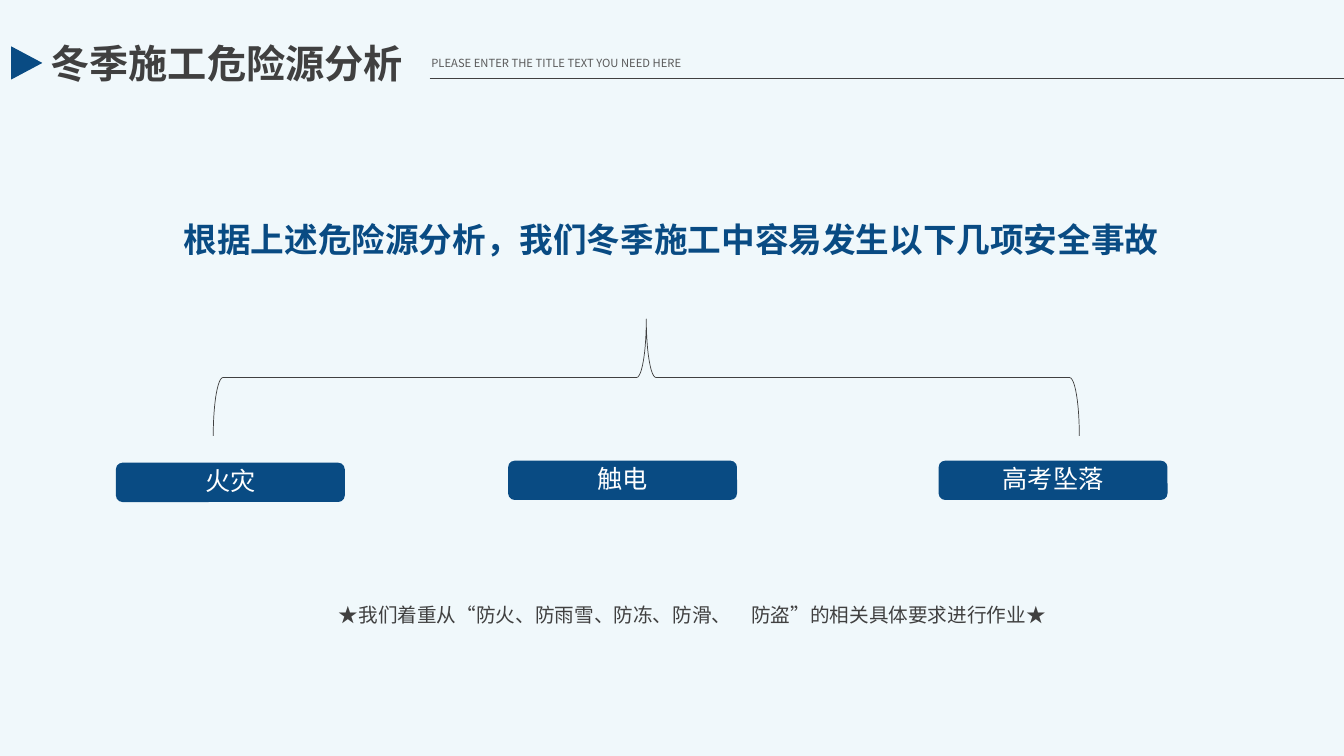
from typing import NamedTuple

from lxml.etree import SubElement
from pptx import Presentation
from pptx.dml.color import RGBColor
from pptx.enum.shapes import MSO_CONNECTOR, MSO_SHAPE as Shape
from pptx.enum.text import MSO_ANCHOR, MSO_AUTO_SIZE, PP_ALIGN as Align
from pptx.oxml.ns import qn
from pptx.util import Inches, Pt

FONT = "Noto Sans CJK SC"
BACKGROUND = RGBColor(0xF0, 0xF8, 0xFB)
NAVY = RGBColor(0x09, 0x4B, 0x83)
DARK = RGBColor(0x40, 0x40, 0x40)
GRAY = RGBColor(0x59, 0x59, 0x59)
WHITE = RGBColor(0xFF, 0xFF, 0xFF)


class Box(NamedTuple):
    left: float
    top: float
    width: float
    height: float

    def lengths(self) -> list:
        return [Inches(v) for v in self]


class Style(NamedTuple):
    size: int
    color: RGBColor
    bold: bool = False
    align: Align = Align.LEFT


class Accident(NamedTuple):
    name: str
    left: float
    top: float


ACCIDENTS = [
    Accident("火灾", 1.15, 4.59),
    Accident("触电", 5.04, 4.57),
    Accident("高考坠落", 9.31, 4.57),
]


def write(shape, text: str, style: Style, inset: float = 0.1) -> None:
    tf = shape.text_frame
    tf.word_wrap = True
    tf.auto_size = MSO_AUTO_SIZE.NONE
    tf.vertical_anchor = MSO_ANCHOR.MIDDLE
    tf.margin_left = tf.margin_right = Inches(inset)
    tf.margin_top = tf.margin_bottom = 0
    p = tf.paragraphs[0]
    p.text = text
    p.alignment = style.align
    p.font.name = FONT
    p.font.size = Pt(style.size)
    p.font.bold = style.bold
    p.font.color.rgb = style.color
    # East Asian typeface
    SubElement(p.font._element, qn("a:ea")).set("typeface", FONT)


def add_text(s, box: Box, text: str, style: Style) -> None:
    write(s.shapes.add_textbox(*box.lengths()), text, style)


def add_solid(s, kind: Shape, box: Box):
    sp = s.shapes.add_shape(kind, *box.lengths())
    sp.shadow.inherit = False
    sp.fill.solid()
    sp.fill.fore_color.rgb = NAVY
    sp.line.fill.background()
    return sp


def add_header(s) -> None:
    title = s.shapes.title
    title.left, title.top, title.width, title.height = Box(0.5, 0.39, 4.89, 0.47).lengths()
    write(title, "冬季施工危险源分析", Style(28, DARK, bold=True), inset=0)
    add_text(s, Box(4.18, 0.51, 3.62, 0.24),
             "PLEASE ENTER THE TITLE TEXT YOU NEED HERE", Style(8, GRAY))
    add_solid(s, Shape.ISOSCELES_TRIANGLE, Box(0.1, 0.47, 0.33, 0.31)).rotation = 90
    rule = s.shapes.add_connector(MSO_CONNECTOR.STRAIGHT, Inches(4.26), Inches(0.78),
                                  Inches(13.33), Inches(0.78))
    rule.line.color.rgb = DARK
    rule.line.width = Pt(1)
    SubElement(rule._element.spPr, qn("a:effectLst"))


def add_brace(s) -> None:
    brace = s.shapes.add_shape(Shape.RIGHT_BRACE, *Box(5.83, -0.55, 1.16, 8.59).lengths())
    brace.rotation = 270
    brace.shadow.inherit = False
    brace.fill.background()
    brace.line.color.rgb = DARK
    brace.line.width = Pt(0.5)


def add_accident(s, accident: Accident) -> None:
    sp = add_solid(s, Shape.ROUNDED_RECTANGLE, Box(accident.left, accident.top, 2.27, 0.39))
    write(sp, accident.name, Style(18, WHITE, align=Align.CENTER))
    sp.text_frame.margin_bottom = Inches(0.03)


def main() -> None:
    prs = Presentation()
    prs.slide_width, prs.slide_height = Inches(13.33), Inches(7.5)
    s = prs.slides.add_slide(prs.slide_layouts[5])
    s.background.fill.solid()
    s.background.fill.fore_color.rgb = BACKGROUND

    add_header(s)

    # Statement and its branches
    add_text(s, Box(1.65, 2.12, 10.01, 0.5),
             "根据上述危险源分析，我们冬季施工中容易发生以下几项安全事故",
             Style(24, NAVY, bold=True, align=Align.CENTER))
    add_brace(s)
    for accident in ACCIDENTS:
        add_accident(s, accident)

    # Closing note
    add_text(s, Box(2.12, 5.93, 9.5, 0.34),
             "★我们着重从“防火、防雨雪、防冻、防滑、　防盗”的相关具体要求进行作业★",
             Style(14, DARK, align=Align.CENTER))
    prs.save("out.pptx")


if __name__ == "__main__":
    main()
